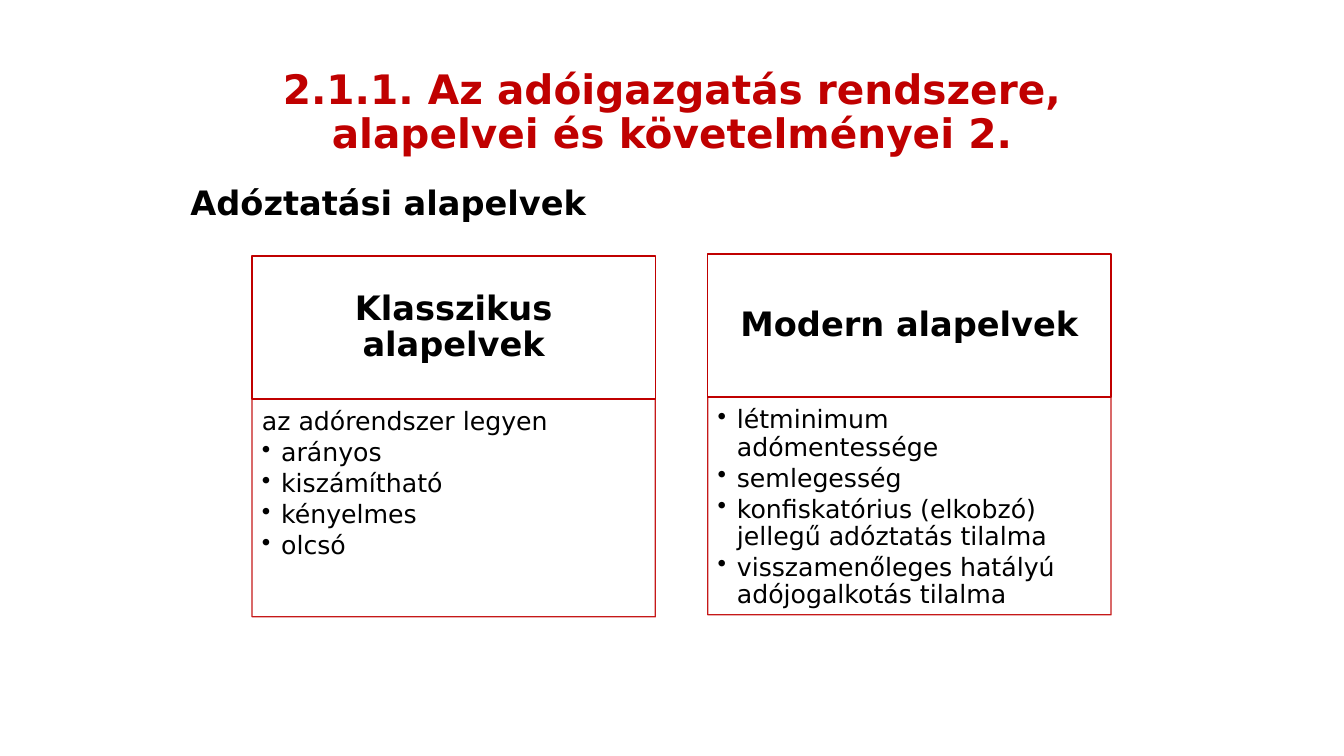
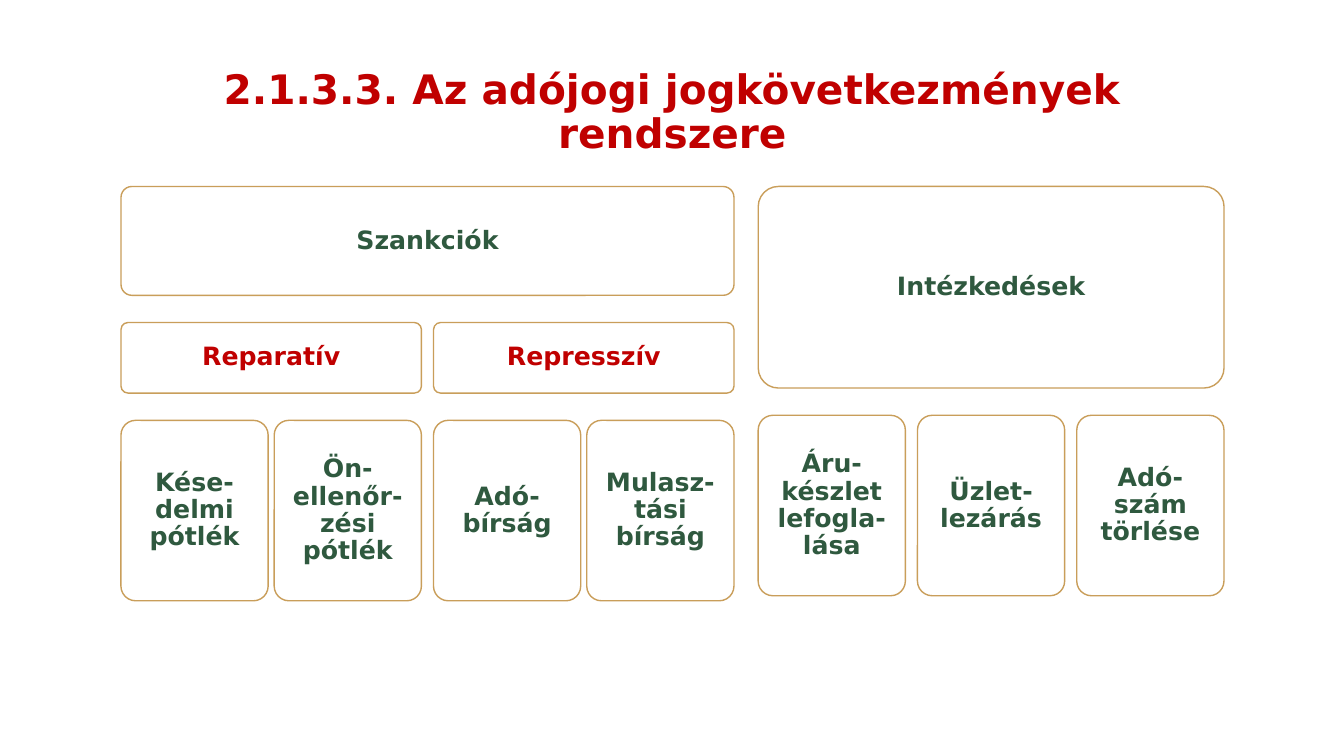
from pptx import Presentation
from pptx.dml.color import RGBColor
from pptx.enum.shapes import MSO_SHAPE as Shape
from pptx.enum.text import MSO_ANCHOR as Anchor, MSO_AUTO_SIZE as AutoSize, PP_ALIGN as Align
from pptx.oxml.ns import qn
from pptx.util import Inches, Pt

# Content
PRINCIPLES_TITLE = "2.1.1. Az adóigazgatás rendszere,\valapelvei és követelményei 2."
PRINCIPLES_HEADING = "Adóztatási alapelvek"
# left, top, header, introduction, bullet items
PRINCIPLES = [
    (2.5, 2.54, "Klasszikus alapelvek", ["az adórendszer legyen"],
     ["arányos", "kiszámítható", "kényelmes", "olcsó"]),
    (7.02, 2.52, "Modern alapelvek", [],
     ["létminimum adómentessége", "semlegesség",
      "konfiskatórius (elkobzó) jellegű adóztatás tilalma",
      "visszamenőleges hatályú adójogalkotás tilalma"]),
]

CONSEQUENCES_TITLE = "2.1.3.3. Az adójogi jogkövetkezmények rendszere"
# label, height, children
CONSEQUENCES = [
    ("Szankciók", 1.08, [
        ("Reparatív", 0.7, ["Kése-delmi pótlék", "Ön-ellenőr-zési pótlék"]),
        ("Represszív", 0.7, ["Adó-bírság", "Mulasz-tási bírság"]),
    ]),
    ("Intézkedések", 2, ["Áru-készlet lefogla-lása", "Üzlet-lezárás", "Adó-szám törlése"]),
]

# Shared style
FONT = "DejaVu Sans"
RED, BLACK, GREEN, GOLD = "C00000", "000000", "2F593F", "C99E5A"
COLUMN_WIDTH, HEADER_HEIGHT, LIST_HEIGHT = 4, 1.42, 2.16
LEAF_WIDTH, LEAF_HEIGHT, ROW_GAP = 1.46, 1.79, 0.27
SIBLING_GAPS = [0.24, 0.12, 0.06]  # by depth in the tree


def rgb(value):
    return RGBColor.from_string(value)


def write(frame, lines, size, color, bold=True, align=Align.CENTER,
          anchor=Anchor.MIDDLE, margins=(0.1, 0.05, 0.1, 0.05), spacing=0.9):
    frame.word_wrap = True
    frame.auto_size = AutoSize.NONE
    frame.vertical_anchor = anchor
    (frame.margin_left, frame.margin_top,
     frame.margin_right, frame.margin_bottom) = map(Inches, margins)
    for index, line in enumerate(lines):
        paragraph = frame.add_paragraph() if index else frame.paragraphs[0]
        paragraph.text = line
        paragraph.alignment = align
        paragraph.line_spacing = spacing
        for run in paragraph.runs:
            run.font.name = FONT
            run.font.size = Pt(size)
            run.font.bold = bold
            run.font.color.rgb = rgb(color)


def add_titled_slide(deck, title):
    slide = deck.slides.add_slide(deck.slide_layouts.get_by_name("Title Only"))
    holder = slide.shapes.title
    holder.left, holder.top, holder.width, holder.height = map(Inches, (0.92, 0.4, 11.5, 1.45))
    write(holder.text_frame, [title], 29, RED)
    return slide


def add_outline(slide, preset, left, top, width, height, color):
    box = slide.shapes.add_shape(preset, *map(Inches, (left, top, width, height)))
    box.shadow.inherit = False
    box.fill.background()
    box.line.color.rgb = rgb(color)
    box.line.width = Pt(1)
    return box


def add_principles(slide, left, top, header, intro, items):
    head = add_outline(slide, Shape.RECTANGLE, left, top, COLUMN_WIDTH, HEADER_HEIGHT, RED)
    write(head.text_frame, [header], 24, BLACK, margins=(0.19, 0.11, 0.19, 0.11))

    body = add_outline(slide, Shape.RECTANGLE, left, top + HEADER_HEIGHT,
                       COLUMN_WIDTH, LIST_HEIGHT, RED)
    # Slightly transparent outline
    for line_color in body._element.spPr.iter(qn("a:srgbClr")):
        line_color.makeelement(qn("a:alpha"), {})
        alpha = line_color.makeelement(qn("a:alpha"), {"val": "90000"})
        line_color.append(alpha)
    write(body.text_frame, intro + items, 18, BLACK, False, Align.LEFT,
          Anchor.TOP, (0.1, 0.1, 0.14, 0.16))
    for index, paragraph in enumerate(body.text_frame.paragraphs):
        paragraph.space_after = Pt(2.7)
        properties = paragraph._p.get_or_add_pPr()
        properties.set("marL", str(Inches(0.19)))
        properties.set("indent", str(-Inches(0.19)))
        if index >= len(intro):
            bullet = properties.makeelement(qn("a:buChar"), {"char": "•"})
            properties.append(bullet)


def add_branches(slide, branches, left, top, depth=0):
    """Draw sibling branches and return the right edge of the last one."""
    for index, branch in enumerate(branches):
        if index:
            left += SIBLING_GAPS[depth]
        if isinstance(branch, str):
            label, height, right = branch, LEAF_HEIGHT, left + LEAF_WIDTH
        else:
            label, height, children = branch
            right = add_branches(slide, children, left, top + height + ROW_GAP, depth + 1)
        box = add_outline(slide, Shape.ROUNDED_RECTANGLE, left, top, right - left, height, GOLD)
        box.adjustments[0] = 0.1
        is_middle = depth == 1 and not isinstance(branch, str)
        write(box.text_frame, [label], 18, RED if is_middle else GREEN, margins=(0.07,) * 4)
        left = right
    return left


def main():
    deck = Presentation()
    deck.slide_width, deck.slide_height = Inches(13.33), Inches(7.5)

    # Principles of taxation
    slide = add_titled_slide(deck, PRINCIPLES_TITLE)
    heading = slide.shapes.add_textbox(*map(Inches, (1.79, 1.76, 5.61, 0.5)))
    write(heading.text_frame, [PRINCIPLES_HEADING], 24, BLACK,
          align=Align.LEFT, anchor=Anchor.TOP, spacing=1.0)
    for column in PRINCIPLES:
        add_principles(slide, *column)

    # Legal consequences
    slide = add_titled_slide(deck, CONSEQUENCES_TITLE)
    add_branches(slide, CONSEQUENCES, 1.2, 1.85)

    deck.save("out.pptx")


if __name__ == "__main__":
    main()
